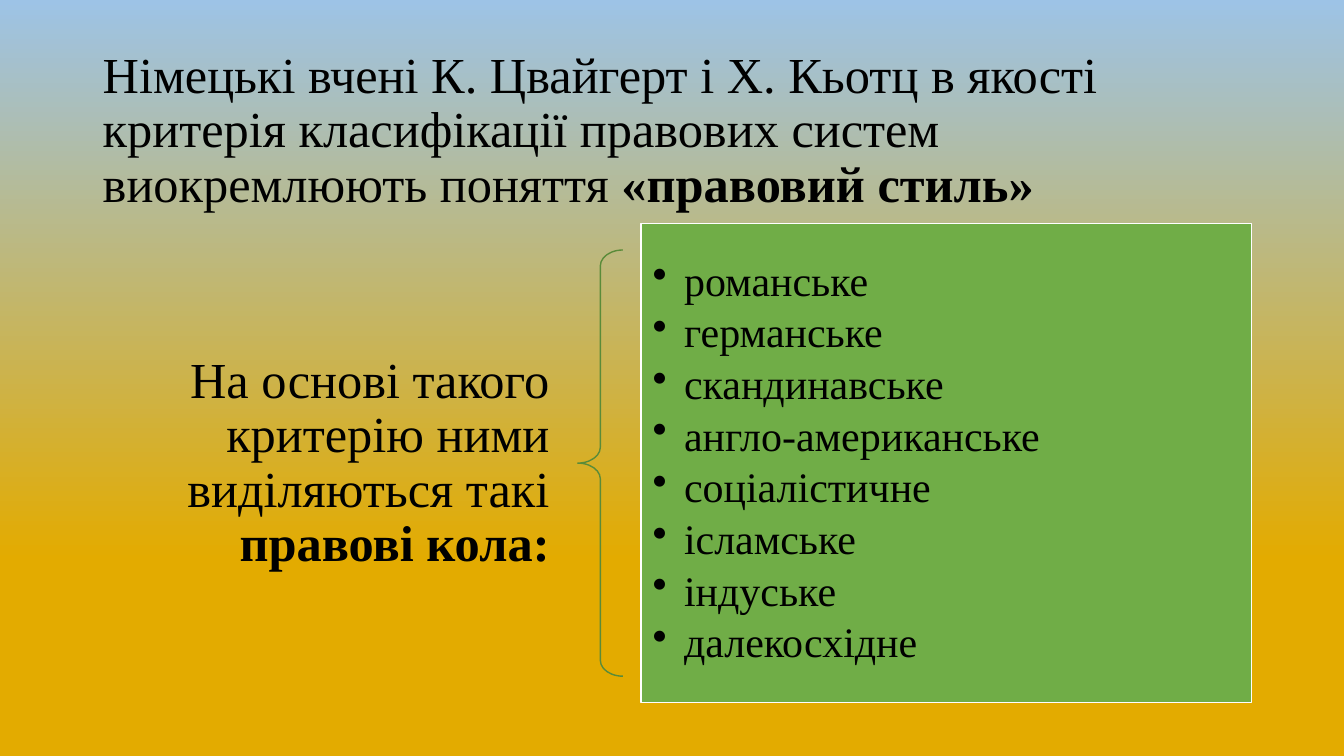
"""Slide on legal style and the legal families derived from it."""
from lxml import etree
from pptx import Presentation
from pptx.dml.color import RGBColor
from pptx.enum import shapes, text
from pptx.oxml import ns
from pptx.util import Cm, Pt

BLACK = RGBColor(0x00, 0x00, 0x00)
WHITE = RGBColor(0xFF, 0xFF, 0xFF)
GREEN = RGBColor(0x70, 0xAD, 0x47)
DARK_GREEN = RGBColor(0x5A, 0x8B, 0x39)
GOLD = RGBColor(0xE3, 0xAB, 0x00)
SKY = RGBColor(0x9D, 0xC3, 0xE6)

FAMILIES = [
    "романське",
    "германське",
    "скандинавське",
    "англо-американське",
    "соціалістичне",
    "ісламське",
    "індуське",
    "далекосхідне",
]


class SlideBuilder:
    """Holds the text style and the current page."""

    font_name = "Times New Roman"
    line_spacing = 0.9

    def __init__(self, page):
        self.page = page

    def background(self, stops):
        fill = self.page.background.fill
        fill.gradient()
        fill.gradient_angle = 90
        for stop, (position, color) in zip(fill.gradient_stops, stops):
            stop.position = position
            stop.color.rgb = color

    def frame(self, box, margin_x, margin_y):
        frame = box.text_frame
        frame.word_wrap = True
        frame.vertical_anchor = text.MSO_ANCHOR.MIDDLE
        frame.margin_left = frame.margin_right = Cm(margin_x)
        frame.margin_top = frame.margin_bottom = Cm(margin_y)
        return frame

    def style(self, para, size, align):
        para.alignment = align
        para.line_spacing = self.line_spacing
        para.font.name = self.font_name
        para.font.size = Pt(size)
        para.font.color.rgb = BLACK

    def statement(self, area, plain, strong, align, margin_x=0.25):
        box = self.page.shapes.add_textbox(*map(Cm, area))
        para = self.frame(box, margin_x, 0.13).paragraphs[0]
        self.style(para, 36, align)
        para.add_run().text = plain
        span = para.add_run()
        span.text = strong
        span.font.bold = True

    def shape(self, kind, area, line_color, fill_color=None):
        shape = self.page.shapes.add_shape(kind, *map(Cm, area))
        shape.shadow.inherit = False
        shape.line.color.rgb = line_color
        shape.line.width = Pt(1)
        if fill_color is None:
            shape.fill.background()
        else:
            shape.fill.solid()
            shape.fill.fore_color.rgb = fill_color
        return shape

    def brace(self, area):
        brace = self.shape(shapes.MSO_SHAPE.LEFT_BRACE, area, DARK_GREEN)
        brace.adjustments[0] = 0.35

    def bullet_panel(self, area, items):
        panel = self.shape(shapes.MSO_SHAPE.RECTANGLE, area, WHITE, GREEN)
        frame = self.frame(panel, 0.3, 0.3)
        frame.text = "\n".join(items)
        for para in frame.paragraphs:
            self.style(para, 30, text.PP_ALIGN.LEFT)
            para.space_after = Pt(4.5)
            self.bullet(para, Cm(0.79))

    def bullet(self, para, indent):
        properties = para._p.get_or_add_pPr()
        properties.set("marL", str(indent))
        properties.set("indent", str(-indent))
        mark = etree.Element(ns.qn("a:buChar"), char="•")
        properties.find(ns.qn("a:spcAft")).addnext(mark)


def main():
    deck = Presentation()
    deck.slide_width, deck.slide_height = Cm(33.87), Cm(19.05)
    builder = SlideBuilder(deck.slides.add_slide(deck.slide_layouts[6]))
    builder.background([(0.26, GOLD), (1, SKY)])
    builder.statement(
        (2.34, 1.47, 29.21, 3.68),
        "Німецькі вчені К.\u00a0Цвайгерт і Х.\u00a0Кьотц в якості критерія "
        "класифікації правових систем виокремлюють поняття ",
        "«правовий стиль»",
        text.PP_ALIGN.LEFT,
    )
    builder.statement(
        (2.34, 9.73, 12.22, 3.91),
        "На основі такого критерію ними виділяються такі ",
        "правові кола:",
        text.PP_ALIGN.RIGHT,
        margin_x=0.71,
    )
    builder.brace((14.56, 6.3, 1.14, 10.74))
    builder.bullet_panel((16.15, 5.64, 15.39, 12.07), FAMILIES)
    deck.save("out.pptx")


if __name__ == "__main__":
    main()
